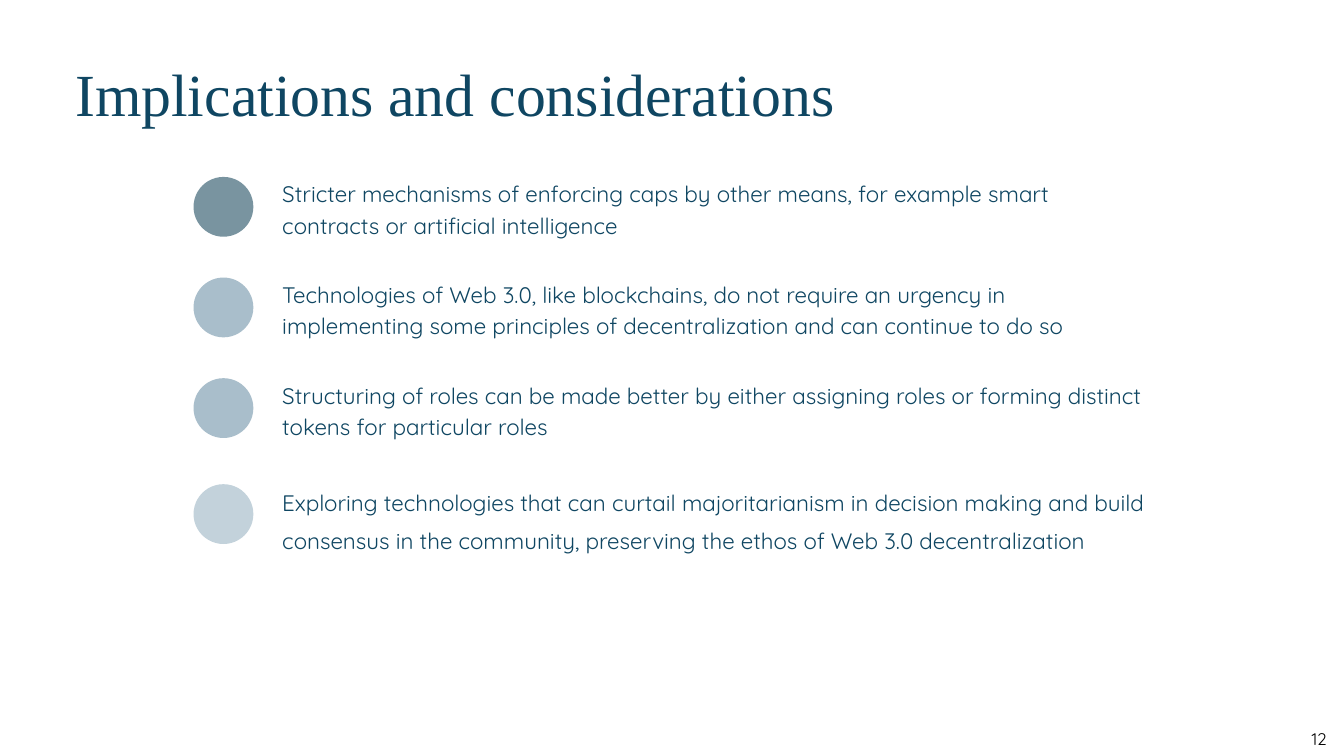
import pptx
import pptx.dml.color
import pptx.enum.shapes
import pptx.enum.text
import pptx.util

COLORS = {
    "navy": "0F4662",
    "black": "000000",
    "slate": "7994A0",
    "mist": "A9BECB",
    "pale": "C3D2DB",
}
COLUMNS, ROWS = 80, 45


class SlideBuilder:
    """Holds the style and the current slide; lengths are grid columns and rows."""

    title_font = "Times New Roman"
    body_font = "Quicksand"

    def __init__(self, presentation):
        self.column = presentation.slide_width / COLUMNS
        self.row = presentation.slide_height / ROWS
        title_only = presentation.slide_layouts[5]
        self.slide = presentation.slides.add_slide(title_only)

    def box(self, left, top, width, height):
        return (round(left * self.column), round(top * self.row),
                round(width * self.column), round(height * self.row))

    def color(self, name):
        return pptx.dml.color.RGBColor.from_string(COLORS[name])

    def fill_text(self, shape, text, size, font, color, line_spacing=None, inset=0.0, wrap=True):
        frame = shape.text_frame
        frame.auto_size = pptx.enum.text.MSO_AUTO_SIZE.NONE
        frame.word_wrap = wrap
        frame.vertical_anchor = pptx.enum.text.MSO_ANCHOR.TOP
        frame.margin_left = frame.margin_right = pptx.util.Inches(inset)
        frame.margin_top = frame.margin_bottom = pptx.util.Inches(inset / 2)
        paragraph = frame.paragraphs[0]
        paragraph.alignment = pptx.enum.text.PP_ALIGN.LEFT
        if line_spacing:
            paragraph.line_spacing = pptx.util.Pt(line_spacing)
        run = paragraph.add_run()
        run.text = text
        run.font.size = pptx.util.Pt(size)
        run.font.name = font
        run.font.color.rgb = self.color(color)

    def title(self, text, left, top, width, height):
        shape = self.slide.shapes.title
        shape.left, shape.top, shape.width, shape.height = self.box(left, top, width, height)
        self.fill_text(shape, text, 64, self.title_font, "navy", line_spacing=89.6)

    def text(self, text, left, top, width, height, size=24, color="navy", **options):
        shape = self.slide.shapes.add_textbox(*self.box(left, top, width, height))
        self.fill_text(shape, text, size, self.body_font, color, **options)

    def circle(self, left, top, diameter, color):
        shape = self.slide.shapes.add_shape(
            pptx.enum.shapes.MSO_SHAPE.OVAL, *self.box(left, top, diameter, diameter))
        shape.shadow.inherit = False
        shape.fill.solid()
        shape.fill.fore_color.rgb = self.color(color)
        shape.line.fill.background()


# Each point: circle colour, circle drop below the text top, line spacing, text
POINTS = [
    ("slate", 0.06, 33.6,
     "Stricter mechanisms of enforcing caps by other means, for example smart "
     "contracts or artificial intelligence"),
    ("mist", 0.06, 33.6,
     "Technologies of Web 3.0, like blockchains, do not require an urgency in "
     "implementing some principles of decentralization and can continue to do so"),
    ("mist", 0.06, 33.6,
     "Structuring of roles can be made better by either assigning roles or forming "
     "distinct tokens for particular roles"),
    ("pale", 0.38, 40.8,
     "Exploring technologies that can curtail majoritarianism in decision making and "
     "build consensus in the community, preserving the ethos of Web 3.0 decentralization"),
]
FIRST_TOP, PITCH = 10.47, 5.99


def main():
    presentation = pptx.Presentation()
    presentation.slide_width = pptx.util.Inches(20)
    presentation.slide_height = pptx.util.Inches(11.25)
    builder = SlideBuilder(presentation)

    # Heading
    builder.title("Implications and considerations", 4.48, 2.64, 50.48, 4.8)

    # Points with their circles
    for index, (color, drop, line_spacing, text) in enumerate(POINTS):
        top = FIRST_TOP + index * PITCH
        builder.circle(11.52, top + drop, 3.56, color)
        # Two lines of text, 18 points to a grid row
        builder.text(text, 16.8, top, 51.68, 2 * line_spacing / 18,
                     line_spacing=line_spacing)

    # Page number
    builder.text("12", 77.68, 43.16, 2, 1.6, size=18, color="black", inset=0.1, wrap=False)

    presentation.save("out.pptx")


if __name__ == "__main__":
    main()
